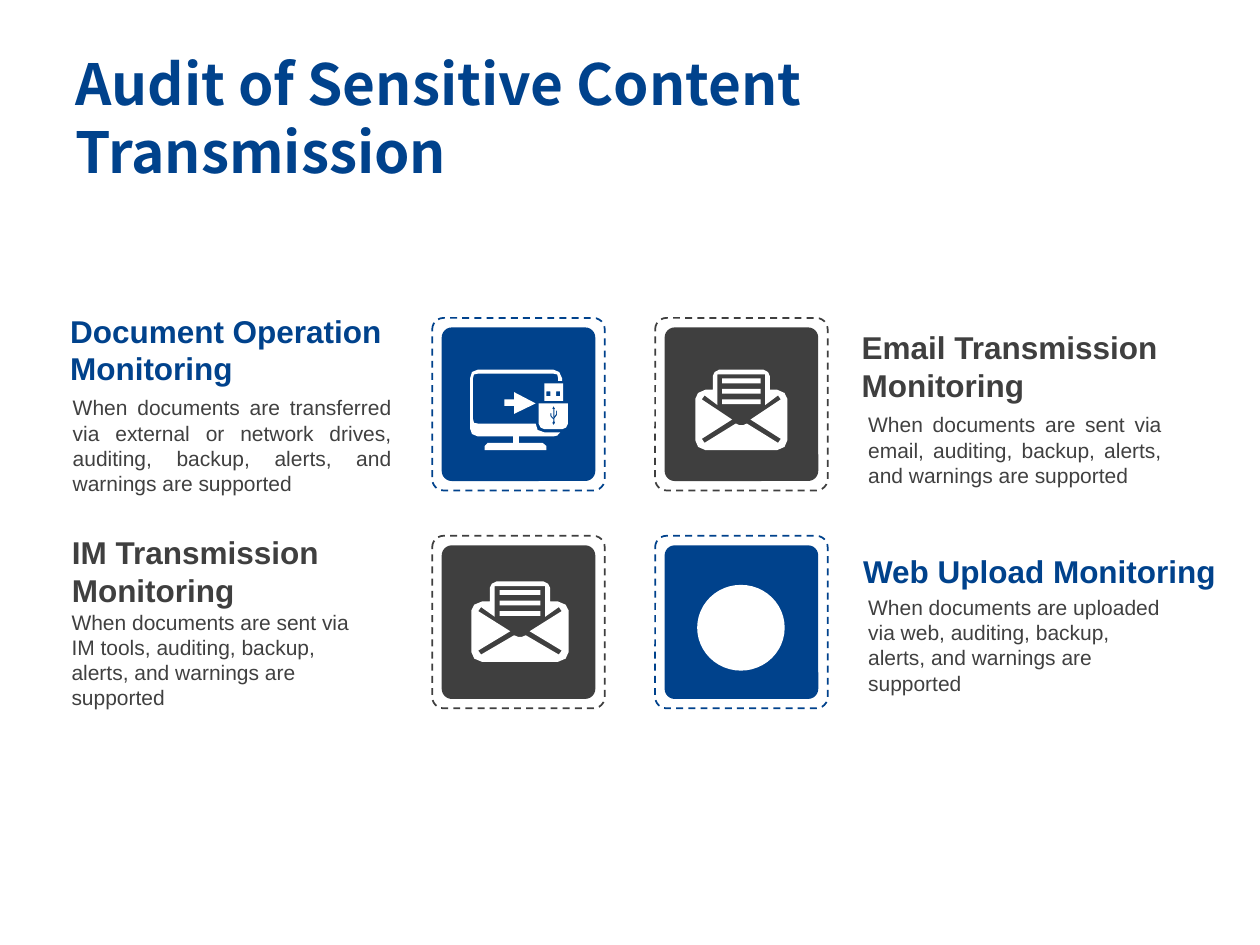
from collections import namedtuple

from pptx import Presentation
from pptx.dml.color import RGBColor
from pptx.enum.dml import MSO_LINE
from pptx.enum.shapes import MSO_SHAPE
from pptx.enum.text import MSO_ANCHOR, MSO_AUTO_SIZE, PP_ALIGN
from pptx.util import Pt

BLUE = RGBColor(0x00, 0x42, 0x8C)
CHARCOAL = RGBColor(0x3F, 0x3F, 0x3F)
BODY_GRAY = RGBColor(0x40, 0x40, 0x40)
WHITE = RGBColor(0xFF, 0xFF, 0xFF)

OVAL, ROUND_RECT = MSO_SHAPE.OVAL, MSO_SHAPE.ROUNDED_RECTANGLE
LEFT, CENTER, JUSTIFY = PP_ALIGN.LEFT, PP_ALIGN.CENTER, PP_ALIGN.JUSTIFY
TOP, MIDDLE = MSO_ANCHOR.TOP, MSO_ANCHOR.MIDDLE

Box = namedtuple("Box", "left top width height")
Topic = namedtuple("Topic", "heading heading_box heading_align detail detail_box "
                            "detail_align color icon icon_box")

GRID_LEFT, GRID_TOP = 247, 181.7
PITCH_X, PITCH_Y = 127.4, 124.5
TILE_SIZE, TILE_INSET, TILE_CORNER = 98.6, 5.4, 0.066


def add_part(slide, kind, box, color):
    part = slide.shapes.add_shape(kind, *map(Pt, box))
    part.shadow.inherit = False
    part.fill.solid()
    part.fill.fore_color.rgb = color
    part.line.fill.background()
    return part


def rectangle(left, top, width, height):
    right, bottom = left + width, top + height
    return [(left, top), (right, top), (right, bottom), (left, bottom)]


def mirrored(right_half):
    """Complete a contour that is symmetric about the middle of its box."""
    return right_half + [(1 - x, y) for x, y in reversed(right_half)]


def add_glyph(slide, box, contours):
    """Draw white contours, given in fractions of a box; nested ones are holes."""
    builder = None
    for contour in contours:
        points = [(Pt(box.left + x * box.width), Pt(box.top + y * box.height))
                  for x, y in contour]
        if builder is None:
            builder = slide.shapes.build_freeform(*points[0])
        else:
            builder.move_to(*points[0])
        builder.add_line_segments(points[1:], close=True)
    glyph = builder.convert_to_shape()
    glyph.shadow.inherit = False
    glyph.fill.solid()
    glyph.fill.fore_color.rgb = WHITE
    glyph.line.fill.background()


def add_envelope(slide, box):
    outline = mirrored([(0.74, 0), (0.79, 0.03), (0.81, 0.08), (0.81, 0.25),
                        (0.89, 0.25), (0.97, 0.29), (1, 0.36), (1, 0.88),
                        (0.97, 0.96), (0.89, 1)])
    fold = mirrored([(0.76, 0.06), (0.76, 0.44), (0.9, 0.32), (0.93, 0.37),
                     (0.6, 0.62), (0.93, 0.86), (0.9, 0.91), (0.56, 0.67),
                     (0.52, 0.69)])
    letter_lines = [rectangle(0.29, top, 0.42, 0.06) for top in (0.11, 0.24, 0.37)]
    add_glyph(slide, box, [outline, fold, *letter_lines])


def add_usb_monitor(slide, box):
    monitor = [(0.08, 0), (0.85, 0), (0.91, 0.03), (0.94, 0.11), (0.94, 0.14),
               (0.9, 0.14), (0.9, 0.11), (0.89, 0.06), (0.85, 0.05), (0.08, 0.05),
               (0.04, 0.06), (0.03, 0.11), (0.03, 0.61), (0.04, 0.66), (0.08, 0.67),
               (0.67, 0.67), (0.69, 0.75), (0.76, 0.78), (0.92, 0.78), (0.89, 0.82),
               (0.85, 0.83), (0.5, 0.83), (0.5, 0.91), (0.74, 0.91), (0.78, 0.95),
               (0.78, 1), (0.15, 1), (0.15, 0.95), (0.18, 0.91), (0.44, 0.91),
               (0.44, 0.83), (0.08, 0.83), (0.02, 0.8), (0, 0.73), (0, 0.11),
               (0.02, 0.03)]
    arrow = [(0.35, 0.37), (0.45, 0.37), (0.45, 0.28), (0.67, 0.42), (0.45, 0.55),
             (0.45, 0.45), (0.35, 0.45)]
    plug = rectangle(0.76, 0.17, 0.19, 0.22)
    pins = [rectangle(left, 0.27, 0.04, 0.06) for left in (0.78, 0.88)]
    casing = [(0.7, 0.42), (1, 0.42), (1, 0.67), (0.98, 0.72), (0.94, 0.74),
              (0.76, 0.74), (0.72, 0.72), (0.7, 0.67)]
    trident = [(0.85, 0.45), (0.87, 0.49), (0.86, 0.49), (0.86, 0.58), (0.88, 0.55),
               (0.88, 0.51), (0.89, 0.51), (0.89, 0.56), (0.86, 0.61), (0.86, 0.64),
               (0.87, 0.66), (0.85, 0.69), (0.84, 0.66), (0.85, 0.64), (0.85, 0.62),
               (0.82, 0.58), (0.82, 0.54), (0.83, 0.54), (0.83, 0.57), (0.85, 0.6),
               (0.85, 0.49), (0.84, 0.49)]
    add_glyph(slide, box, [monitor, arrow, plug, *pins, casing, trident])


def add_web_disc(slide, box):
    add_part(slide, OVAL, box, WHITE)


def add_tile(slide, box, topic):
    inner_size = TILE_SIZE - 2 * TILE_INSET
    inner = Box(box.left + TILE_INSET, box.top + TILE_INSET, inner_size, inner_size)
    panel = add_part(slide, ROUND_RECT, inner, topic.color)
    frame = add_part(slide, ROUND_RECT, box, topic.color)
    for square in (panel, frame):
        square.adjustments[0] = TILE_CORNER
    frame.fill.background()
    frame.line.color.rgb = topic.color
    frame.line.width = Pt(1)
    frame.line.dash_style = MSO_LINE.DASH
    left, top, width, height = topic.icon_box
    topic.icon(slide, Box(box.left + left, box.top + top, width, height))


def style_text(paragraph, text, name, size, color, align, bold):
    paragraph.text = text
    paragraph.alignment = align
    font = paragraph.font
    font.name, font.size, font.bold = name, Pt(size), bold
    font.color.rgb = color


def add_text(slide, box, text, size, color, align, anchor, bold=False, wrap=True):
    frame = slide.shapes.add_textbox(*map(Pt, box)).text_frame
    frame.word_wrap = wrap
    frame.vertical_anchor = anchor
    style_text(frame.paragraphs[0], text, "Arial", size, color, align, bold)


def add_title(slide, box, text):
    title = slide.shapes.title
    title.left, title.top, title.width, title.height = map(Pt, box)
    frame = title.text_frame
    frame.auto_size = MSO_AUTO_SIZE.NONE
    frame.vertical_anchor = MIDDLE
    frame.margin_right = Pt(14)
    style_text(frame.paragraphs[0], text, "Noto Sans CJK SC", 32.4, BLUE, LEFT, True)


TOPICS = [
    Topic("Document Operation Monitoring", Box(33, 174.5, 201, 51), LEFT,
          "When documents are transferred via external or network drives, "
          "auditing, backup, alerts, and warnings are supported",
          Box(34.5, 223, 196.5, 63), JUSTIFY, BLUE,
          add_usb_monitor, Box(21.6, 29.5, 56, 46)),
    Topic("Email Transmission Monitoring", Box(485.3, 183.8, 190, 51), LEFT,
          "When documents are sent via email, auditing, backup, alerts, "
          "and warnings are supported",
          Box(489, 225.5, 182, 63), JUSTIFY, CHARCOAL,
          add_envelope, Box(23, 29.5, 52.5, 46)),
    Topic("IM Transmission Monitoring", Box(34, 301, 182, 51), LEFT,
          "When documents are sent via IM tools, auditing, backup, alerts, "
          "and warnings are supported",
          Box(33.8, 345.5, 182, 63), LEFT, CHARCOAL,
          add_envelope, Box(22.4, 26, 55.5, 46)),
    Topic("Web Upload Monitoring", Box(485, 311.8, 218, 29), CENTER,
          "When documents are uploaded via web, auditing, backup, alerts, "
          "and warnings are supported",
          Box(489, 337, 182, 63), LEFT, BLUE,
          add_web_disc, Box(24, 28, 50, 49)),
]


def main():
    deck = Presentation()
    deck.slide_width, deck.slide_height = Pt(720), Pt(540)
    slide = deck.slides.add_slide(deck.slide_layouts[5])
    add_title(slide, Box(36, 21.6, 648, 90), "Audit of Sensitive Content Transmission")
    for index, topic in enumerate(TOPICS):
        row, column = divmod(index, 2)
        add_tile(slide, Box(GRID_LEFT + column * PITCH_X, GRID_TOP + row * PITCH_Y,
                            TILE_SIZE, TILE_SIZE), topic)
        add_text(slide, topic.detail_box, topic.detail, 12, BODY_GRAY,
                 topic.detail_align, MIDDLE)
        add_text(slide, topic.heading_box, topic.heading, 18, topic.color,
                 topic.heading_align, TOP, bold=True,
                 wrap=topic.heading_align != CENTER)
    deck.save("out.pptx")


if __name__ == "__main__":
    main()
